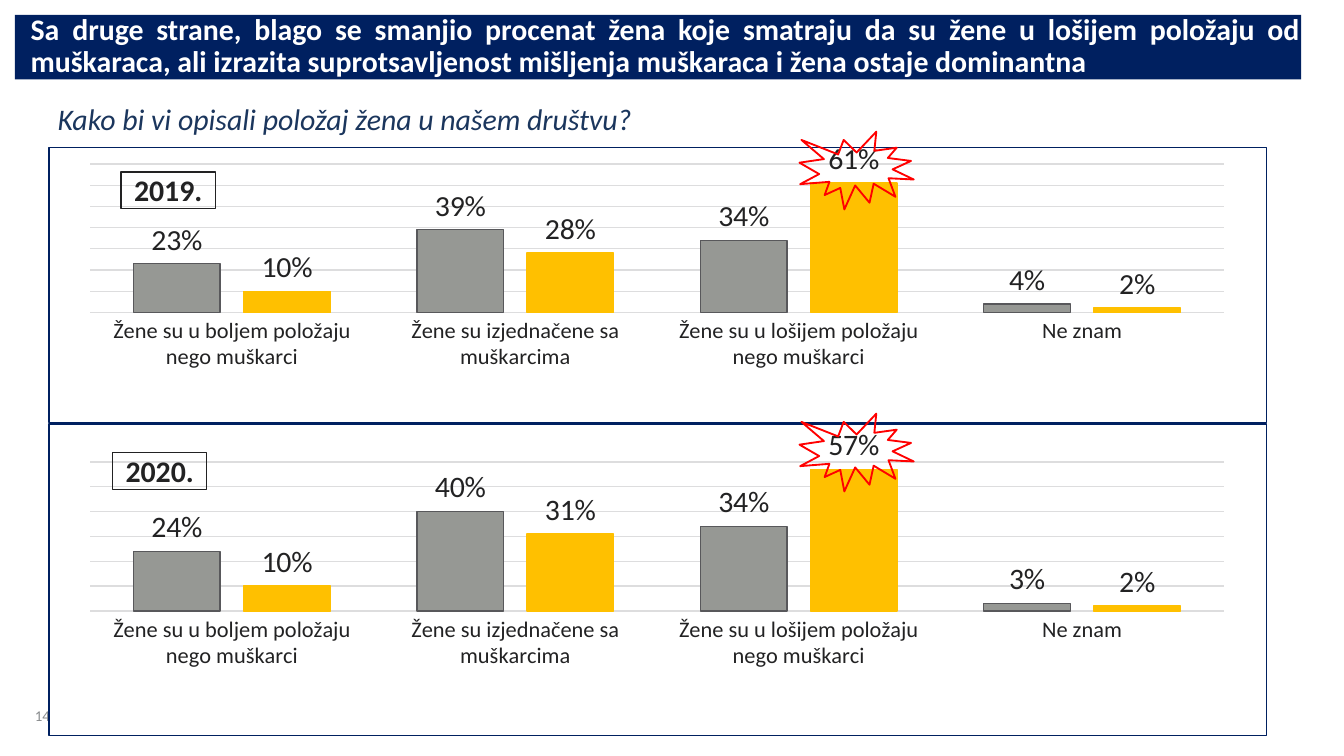
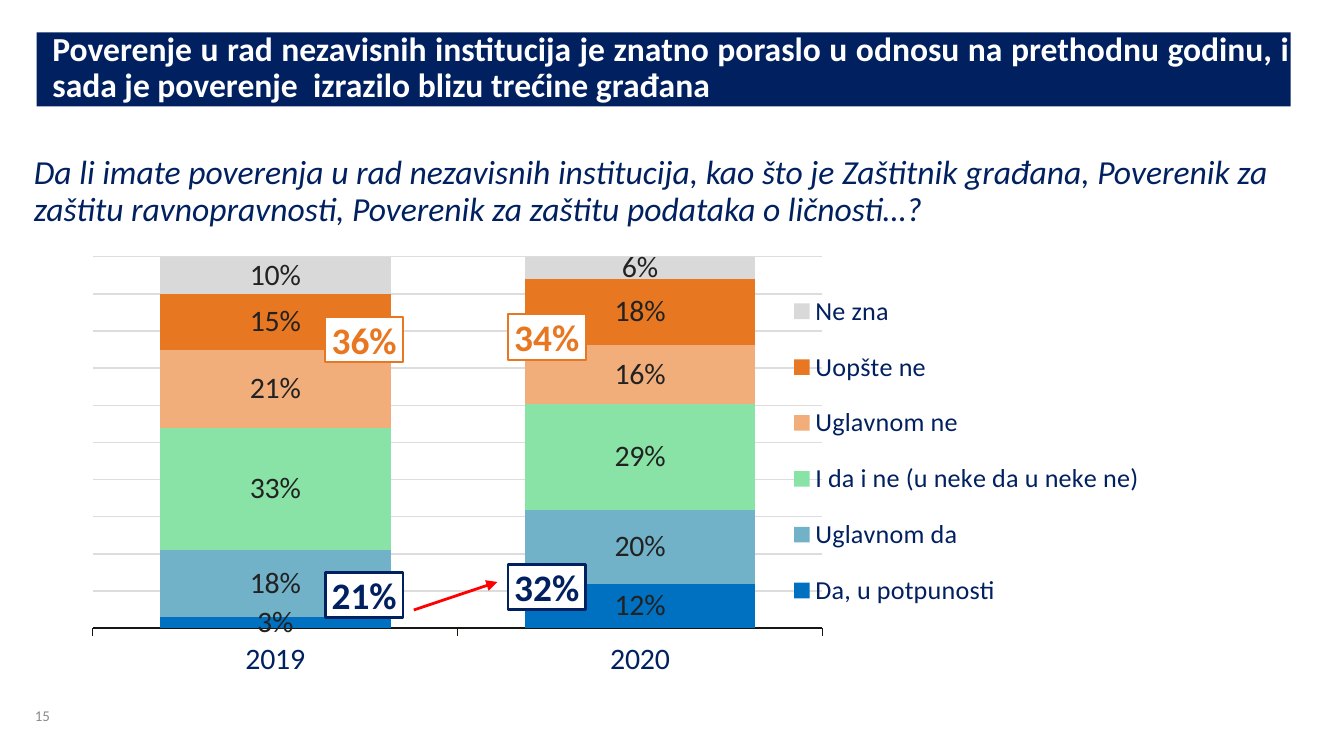
from typing import Any, NamedTuple

from lxml import etree
from pptx import Presentation
from pptx import util as u
from pptx.chart import data as chart_data
from pptx.dml.color import RGBColor
from pptx.enum import chart as charts, shapes, text
from pptx.oxml import parse_xml
from pptx.oxml.ns import nsdecls, qn

FONT = "Calibri"
NAVY, INK, GRID, RED, WHITE = "002060", "222223", "DDDDDE", "FF0000", "FFFFFF"
ORANGE, GREY, GOLD = "E87722", "969894", "FFC000"
PERCENT = r"0\%"
OPINIONS = [
    "Žene su u boljem položaju nego muškarci",
    "Žene su izjednačene sa muškarcima",
    "Žene su u lošijem položaju nego muškarci",
    "Ne znam",
]


class Box(NamedTuple):
    """Left, top, width and height in centimetres."""
    left: float
    top: float
    width: float
    height: float


class Series(NamedTuple):
    name: str
    values: tuple[int, ...]
    fill: str
    line: str | None = None


class Style(NamedTuple):
    """What differs between the bar charts."""
    kind: Any
    label_position: Any
    gap: int
    overlap: int
    tick: Any
    axis_line: str
    axis_color: str
    axis_size: int
    border: str | None


class YearPanel(NamedTuple):
    year: str
    chart: Box
    plot: tuple[float, ...]
    top_value: int
    men: tuple[int, ...]
    women: tuple[int, ...]
    tag: Box
    burst: Box


class Total(NamedTuple):
    label: str
    left: float
    top: float
    color: str
    weight: float


CLUSTERED = Style(charts.XL_CHART_TYPE.COLUMN_CLUSTERED, charts.XL_LABEL_POSITION.OUTSIDE_END,
                  100, -27, charts.XL_TICK_MARK.NONE, GRID, INK, 12, NAVY)
STACKED = Style(charts.XL_CHART_TYPE.COLUMN_STACKED_100, charts.XL_LABEL_POSITION.CENTER,
                58, 100, charts.XL_TICK_MARK.OUTSIDE, "161612", NAVY, 16, None)

PANELS = [
    YearPanel("2019.", Box(0.91, 2.69, 23.04, 5.31), (0.034, 0.06, 0.931, 0.54), 70,
              (23, 39, 34, 4), (10, 28, 61, 2),
              Box(2.29, 3.25, 1.78, 0.69), Box(15.11, 2.49, 2.16, 1.47)),
    YearPanel("2020.", Box(0.91, 8, 23.04, 5.92), (0.034, 0.122, 0.931, 0.478), 60,
              (24, 40, 34, 3), (10, 31, 57, 2),
              Box(2.13, 8.56, 1.78, 0.69), Box(15.11, 7.82, 2.16, 1.47)),
]
TRUST = [
    Series("Da, u potpunosti", (3, 12), "0070C0"),
    Series("Uglavnom da", (18, 20), "71B2C9"),
    Series("I da i ne (u neke da u neke ne)", (33, 29), "89E3A7"),
    Series("Uglavnom ne", (21, 16), "F1AD7A"),
    Series("Uopšte ne", (15, 18), ORANGE),
    Series("Ne zna", (10, 6), "D9D9D9"),
]
TOTALS = [
    Total("36%", 6.15, 5.99, ORANGE, 1),
    Total("21%", 6.15, 10.82, NAVY, 1.5),
    Total("34%", 9.6, 5.94, ORANGE, 1),
    Total("32%", 9.6, 10.67, NAVY, 1.5),
]


# Formatting helpers
def rgb(code: str) -> RGBColor:
    return RGBColor.from_string(code)


def assign(target: Any, values: dict[str, Any]) -> None:
    for name, value in values.items():
        setattr(target, name, value)


def set_font(font: Any, size: float, color: str, **extra: bool) -> None:
    assign(font, {"name": FONT, "size": u.Pt(size), **extra})
    font.color.rgb = rgb(color)


def set_fill(fill: Any, color: str | None) -> None:
    if color is None:
        fill.background()
    else:
        fill.solid()
        fill.fore_color.rgb = rgb(color)


def set_line(line: Any, color: str | None, weight: float = 0.75) -> None:
    set_fill(line.fill, color)
    if color:
        line.width = u.Pt(weight)


def place(shape: Any, box: Box) -> None:
    assign(shape, {name: u.Cm(value) for name, value in box._asdict().items()})


def write(shape: Any, words: str, size: float, color: str, paragraph: dict[str, Any],
          insets: tuple[float, float] = (0, 0), anchor: Any = text.MSO_ANCHOR.TOP,
          wrap: bool = True, **font: bool) -> Any:
    side, edge = (u.Cm(value) for value in insets)
    frame = shape.text_frame
    assign(frame, {"text": words, "word_wrap": wrap, "auto_size": text.MSO_AUTO_SIZE.NONE,
                   "vertical_anchor": anchor, "margin_left": side, "margin_right": side,
                   "margin_top": edge, "margin_bottom": edge})
    line = frame.paragraphs[0]
    assign(line, paragraph)
    set_font(line.runs[0].font, size, color, **font)
    return line


# Parts shared by the slides
def start_slide(prs: Any, number: int, headline: str, headline_box: Box, question: str,
                question_box: Box, size: float, question_color: str) -> Any:
    slide = prs.slides.add_slide(prs.slide_layouts[1])
    band, prompt = slide.placeholders

    place(band, headline_box)
    set_fill(band.fill, NAVY)
    line = write(band, headline, size, WHITE,
                 {"alignment": text.PP_ALIGN.JUSTIFY, "line_spacing": 0.9,
                  "space_before": u.Pt(4.1)}, bold=True)
    line._p.get_or_add_pPr().set("marL", str(u.Cm(0.3)))

    place(prompt, question_box)
    line = write(prompt, question, size, question_color,
                 {"line_spacing": 0.9, "space_before": u.Pt(0)},
                 insets=(0.18, 0.1), anchor=text.MSO_ANCHOR.BOTTOM, italic=True)
    properties = line._p.get_or_add_pPr()
    properties.set("marL", "0")
    properties.set("indent", "0")
    etree.SubElement(properties, qn("a:buNone"))

    page = slide.shapes.add_textbox(*map(u.Cm, Box(0.66, 13.03, 0.86, 0.66)))
    write(page, str(number), 8, "888B8D", {"line_spacing": 0.85, "space_before": u.Pt(2)},
          anchor=text.MSO_ANCHOR.BOTTOM, wrap=False)
    return slide


def add_figure(slide: Any, preset: Any, box: Box, line: str, weight: float,
               fill: str | None = None) -> Any:
    figure = slide.shapes.add_shape(preset, *map(u.Cm, box))
    figure.shadow.inherit = False
    set_fill(figure.fill, fill)
    set_line(figure.line, line, weight)
    return figure


def add_tag(slide: Any, words: str, box: Box, size: float, color: str, weight: float,
            fill: str | None = None) -> None:
    tag = add_figure(slide, shapes.MSO_SHAPE.RECTANGLE, box, color, weight, fill)
    write(tag, words, size, color, {"alignment": text.PP_ALIGN.CENTER}, bold=True)


# Charts
def manual_layout(parts: tuple[float, ...], inner: bool = False) -> Any:
    target = '<c:layoutTarget val="inner"/>' if inner else ""
    modes = '<c:xMode val="edge"/><c:yMode val="edge"/>'
    sizes = "".join(f'<c:{name} val="{value}"/>' for name, value in zip("xywh", parts))
    return parse_xml(f"<c:layout {nsdecls('c')}><c:manualLayout>{target}{modes}{sizes}"
                     "</c:manualLayout></c:layout>")


def drop_layout(parent: Any) -> None:
    for layout in parent.findall(qn("c:layout")):
        parent.remove(layout)


def frame_chart(chart: Any, border: str | None) -> None:
    paint = (f'<a:solidFill><a:srgbClr val="{border}"/></a:solidFill>' if border
             else "<a:noFill/>")
    outline = parse_xml(f"<c:spPr {nsdecls('c', 'a')}><a:noFill/>"
                        f'<a:ln w="{u.Pt(0.75)}">{paint}</a:ln></c:spPr>')
    chart._chartSpace.find(qn("c:txPr")).addprevious(outline)


def add_columns(slide: Any, box: Box, plot_area: tuple[float, ...], categories: list[str],
                rows: list[Series], style: Style) -> Any:
    source = chart_data.CategoryChartData(number_format=PERCENT)
    source.categories = categories
    for row in rows:
        source.add_series(row.name, row.values)
    chart = slide.shapes.add_chart(style.kind, *map(u.Cm, box), source).chart
    assign(chart, {"has_legend": False, "has_title": False})
    set_font(chart.font, 10, INK)
    frame_chart(chart, style.border)

    area = chart._chartSpace.chart.plotArea
    drop_layout(area)
    area.insert(0, manual_layout(plot_area, inner=True))

    assign(chart.category_axis, {"major_tick_mark": style.tick,
                                 "minor_tick_mark": charts.XL_TICK_MARK.NONE})
    set_font(chart.category_axis.tick_labels.font, style.axis_size, style.axis_color)
    set_line(chart.category_axis.format.line, style.axis_line)
    assign(chart.value_axis, {"visible": False, "has_major_gridlines": True})
    set_line(chart.value_axis.major_gridlines.format.line, GRID)

    plot = chart.plots[0]
    assign(plot, {"gap_width": style.gap, "overlap": style.overlap, "vary_by_categories": False})
    for series, row in zip(plot.series, rows):
        set_fill(series.format.fill, row.fill)
        set_line(series.format.line, row.line)
        labels = series.data_labels
        assign(labels, {"show_value": True, "position": style.label_position,
                        "number_format": PERCENT, "number_format_is_linked": False})
        set_font(labels.font, 16, INK)
    return chart


def add_legend(chart: Any, parts: tuple[float, ...]) -> None:
    chart.has_legend = True
    legend = chart.legend
    assign(legend, {"position": charts.XL_LEGEND_POSITION.RIGHT, "include_in_layout": False})
    set_font(legend.font, 14, NAVY)
    drop_layout(legend._element)
    legend._element.find(qn("c:legendPos")).addnext(manual_layout(parts))


def add_arrow(slide: Any, start: tuple[float, float], end: tuple[float, float]) -> None:
    arrow = slide.shapes.add_connector(shapes.MSO_CONNECTOR.STRAIGHT, *map(u.Cm, start + end))
    set_line(arrow.line, RED, 1.5)
    etree.SubElement(arrow.line._get_or_add_ln(), qn("a:tailEnd"), type="triangle")
    etree.SubElement(arrow._element.spPr, qn("a:effectLst"))


# Slides
def build_position_slide(prs: Any) -> None:
    slide = start_slide(
        prs, 14,
        "Sa druge strane, blago se smanjio procenat žena koje smatraju da su žene u lošijem "
        "položaju od muškaraca, ali izrazita suprotsavljenost mišljenja muškaraca i žena "
        "ostaje dominantna", Box(0.28, 0.28, 24.31, 1.22),
        "Kako bi vi opisali položaj žena u našem društvu?", Box(0.91, 1.7, 13.28, 0.99),
        16, "1B365D")
    for panel in PANELS:
        rows = [Series("Muški", panel.men, GREY, "58585B"),
                Series("Ženski", panel.women, GOLD, GOLD)]
        chart = add_columns(slide, panel.chart, panel.plot, OPINIONS, rows, CLUSTERED)
        assign(chart.value_axis, {"minimum_scale": 0, "maximum_scale": panel.top_value,
                                  "major_unit": 10})
        add_figure(slide, shapes.MSO_SHAPE.EXPLOSION1, panel.burst, RED, 1)
        add_tag(slide, panel.year, panel.tag, 16, INK, 0.75)


def build_trust_slide(prs: Any) -> None:
    slide = start_slide(
        prs, 15,
        "Poverenje u rad nezavisnih institucija je znatno poraslo u odnosu na prethodnu "
        "godinu, i sada je poverenje  izrazilo blizu trećine građana",
        Box(0.69, 0.61, 23.7, 1.4),
        "Da li imate poverenja u rad nezavisnih institucija, kao što je Zaštitnik građana, "
        "Poverenik za zaštitu ravnopravnosti, Poverenik za zaštitu podataka o ličnosti…?",
        Box(0.46, 3.02, 24.38, 1.4), 18, NAVY)
    chart = add_columns(slide, Box(1.4, 4.72, 20.83, 9.22), (0.017, 0.01, 0.662, 0.765),
                        ["2019", "2020"], TRUST, STACKED)
    add_legend(chart, (0.63, 0.04, 0.36, 0.74))
    for total in TOTALS:
        add_tag(slide, total.label, Box(total.left, total.top, 1.47, 0.86), 20,
                total.color, total.weight, WHITE)
    add_arrow(slide, (7.82, 11.53), (9.4, 11))


def main() -> None:
    prs = Presentation()
    assign(prs, {"slide_width": u.Cm(25.4), "slide_height": u.Cm(14.29)})
    build_position_slide(prs)
    build_trust_slide(prs)
    prs.save("out.pptx")


if __name__ == "__main__":
    main()
